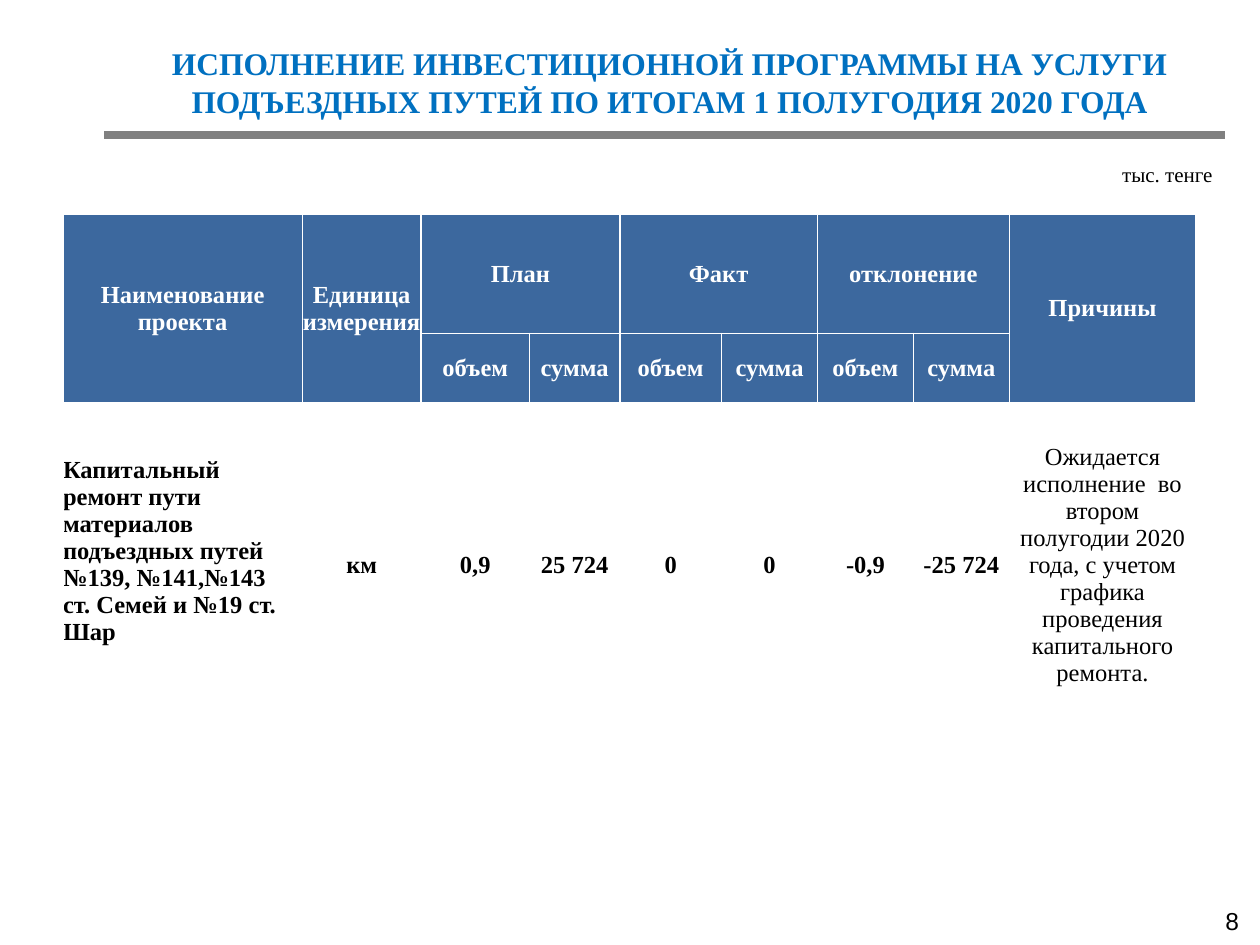
from dataclasses import dataclass

from lxml.etree import SubElement
from pptx import Presentation
from pptx.dml.color import RGBColor
from pptx.enum.shapes import MSO_CONNECTOR
from pptx.enum.text import MSO_ANCHOR, MSO_AUTO_SIZE, PP_ALIGN
from pptx.oxml.ns import qn
from pptx.slide import Slide
from pptx.table import Table, _Cell
from pptx.text.text import TextFrame
from pptx.util import Pt

WHITE = RGBColor(0xFF, 0xFF, 0xFF)
BLACK = RGBColor(0x00, 0x00, 0x00)
GRAY = RGBColor(0x80, 0x80, 0x80)
TITLE_BLUE = RGBColor(0x00, 0x70, 0xC0)
HEADER_BLUE = RGBColor(0x3C, 0x68, 0x9E)
SERIF = "Times New Roman"

COLUMN_WIDTHS = (136.8, 67.8, 62, 51.6, 58.2, 54.8, 54.8, 54.8, 106.6)
ROW_HEIGHTS = (68, 39.5, 186)


@dataclass(frozen=True)
class TextStyle:
    size: float
    color: RGBColor
    bold: bool = False
    name: str = SERIF
    alignment: PP_ALIGN = PP_ALIGN.CENTER


@dataclass(frozen=True)
class Label:
    text: str
    left: float
    top: float
    width: float
    height: float
    anchor: MSO_ANCHOR
    style: TextStyle


@dataclass(frozen=True)
class HeaderCell:
    text: str
    row: int
    column: int
    rows: int = 1
    columns: int = 1


HEADER_STYLE = TextStyle(14, WHITE, bold=True)
VALUE_STYLE = TextStyle(14, BLACK, bold=True)
PROJECT_STYLE = TextStyle(14, BLACK, bold=True, alignment=PP_ALIGN.LEFT)
REASON_STYLE = TextStyle(14, BLACK)

LABELS = (
    Label("тыс. тенге", 609, 88.5, 91, 22, MSO_ANCHOR.MIDDLE,
          TextStyle(12, BLACK, alignment=PP_ALIGN.RIGHT)),
    Label("8", 547, 514, 168, 26, MSO_ANCHOR.TOP,
          TextStyle(14, BLACK, name="Arial", alignment=PP_ALIGN.RIGHT)),
)

GROUPS = ("План", "Факт", "отклонение")
HEADERS = [
    HeaderCell("Наименование проекта", 0, 0, rows=2),
    HeaderCell("Единица измерения", 0, 1, rows=2),
    HeaderCell("Причины", 0, 8, rows=2),
]
for index, group in enumerate(GROUPS):
    first_column = 2 + 2 * index
    HEADERS += [
        HeaderCell(group, 0, first_column, columns=2),
        HeaderCell("объем", 1, first_column),
        HeaderCell("сумма", 1, first_column + 1),
    ]

PROJECT = ("Капитальный ремонт пути материалов подъездных путей \v"
           "№139, №141,№143\nст. Семей и №19 ст. Шар")
VALUES = ("км", "0,9", "25 724", "0", "0", "-0,9", "-25 724")
REASON = ("Ожидается исполнение  во втором полугодии 2020 года, "
          "c учетом графика проведения капитального ремонта.")


def write_text(frame: TextFrame, text: str, style: TextStyle) -> None:
    frame.text = text
    frame.word_wrap = True
    for paragraph in frame.paragraphs:
        paragraph.alignment = style.alignment
        paragraph.font.name = style.name
        paragraph.font.size = Pt(style.size)
        paragraph.font.bold = style.bold
        paragraph.font.color.rgb = style.color


def write_title(slide: Slide) -> None:
    title = slide.shapes.title
    title.left, title.top = Pt(65.5), Pt(21.6)
    title.width, title.height = Pt(634.5), Pt(51)
    frame = title.text_frame
    write_text(frame, "ИСПОЛНЕНИЕ ИНВЕСТИЦИОННОЙ ПРОГРАММЫ НА УСЛУГИ "
               "ПОДЪЕЗДНЫХ ПУТЕЙ ПО ИТОГАМ 1 ПОЛУГОДИЯ 2020 ГОДА",
               TextStyle(18, TITLE_BLUE, bold=True))
    frame.auto_size = MSO_AUTO_SIZE.NONE
    frame.vertical_anchor = MSO_ANCHOR.TOP


def draw_rule(slide: Slide) -> None:
    rule = slide.shapes.add_connector(
        MSO_CONNECTOR.STRAIGHT, Pt(59.5), Pt(77), Pt(700), Pt(77))
    rule.line.color.rgb = GRAY
    rule.line.width = Pt(4.5)
    SubElement(rule._element.spPr, qn("a:effectLst"))


def draw_label(slide: Slide, label: Label) -> None:
    box = slide.shapes.add_textbox(
        Pt(label.left), Pt(label.top), Pt(label.width), Pt(label.height))
    write_text(box.text_frame, label.text, label.style)
    box.text_frame.vertical_anchor = label.anchor


def add_borders(cell: _Cell) -> None:
    properties = cell._tc.get_or_add_tcPr()
    for side in ("lnL", "lnR", "lnT", "lnB"):
        line = SubElement(properties, qn(f"a:{side}"), w=str(Pt(1)))
        fill = SubElement(line, qn("a:solidFill"))
        SubElement(fill, qn("a:srgbClr"), val=str(WHITE))


def write_cell(cell: _Cell, text: str, style: TextStyle) -> None:
    write_text(cell.text_frame, text, style)
    cell.vertical_anchor = MSO_ANCHOR.MIDDLE


def fill_header(table: Table) -> None:
    for header in HEADERS:
        cell = table.cell(header.row, header.column)
        if header.rows * header.columns > 1:
            cell.merge(table.cell(header.row + header.rows - 1,
                                  header.column + header.columns - 1))
        write_cell(cell, header.text, HEADER_STYLE)


def fill_body(table: Table) -> None:
    project = table.cell(2, 0)
    write_cell(project, PROJECT, PROJECT_STYLE)
    project.margin_bottom = Pt(16)
    for column, value in enumerate(VALUES, start=1):
        write_cell(table.cell(2, column), value, VALUE_STYLE)
    write_cell(table.cell(2, 8), REASON, REASON_STYLE)


def draw_table(slide: Slide) -> None:
    table = slide.shapes.add_table(
        len(ROW_HEIGHTS), len(COLUMN_WIDTHS), Pt(36), Pt(122.5),
        Pt(sum(COLUMN_WIDTHS)), Pt(sum(ROW_HEIGHTS))).table
    table.first_row = False
    table.horz_banding = False
    for column, width in zip(table.columns, COLUMN_WIDTHS):
        column.width = Pt(width)
    for row_index, (row, height) in enumerate(zip(table.rows, ROW_HEIGHTS)):
        row.height = Pt(height)
        for cell in row.cells:
            cell.margin_left = cell.margin_right = Pt(0)
            cell.margin_top = cell.margin_bottom = Pt(0)
            add_borders(cell)
            if row_index < 2:
                cell.fill.solid()
                cell.fill.fore_color.rgb = HEADER_BLUE
            else:
                cell.fill.background()
    fill_header(table)
    fill_body(table)


def main() -> None:
    presentation = Presentation()
    presentation.slide_width, presentation.slide_height = Pt(720), Pt(540)
    slide = presentation.slides.add_slide(presentation.slide_layouts[5])
    write_title(slide)
    draw_rule(slide)
    for label in LABELS:
        draw_label(slide, label)
    draw_table(slide)
    presentation.save("out.pptx")


if __name__ == "__main__":
    main()
